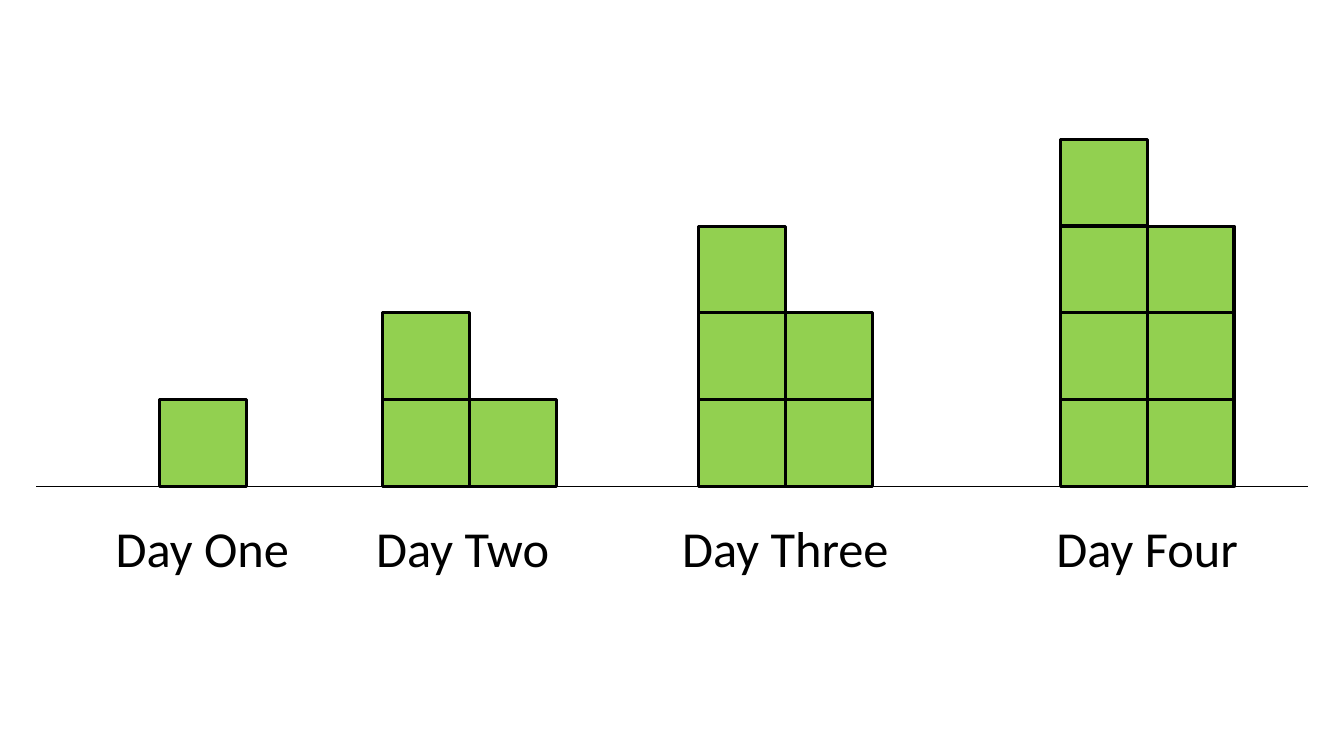
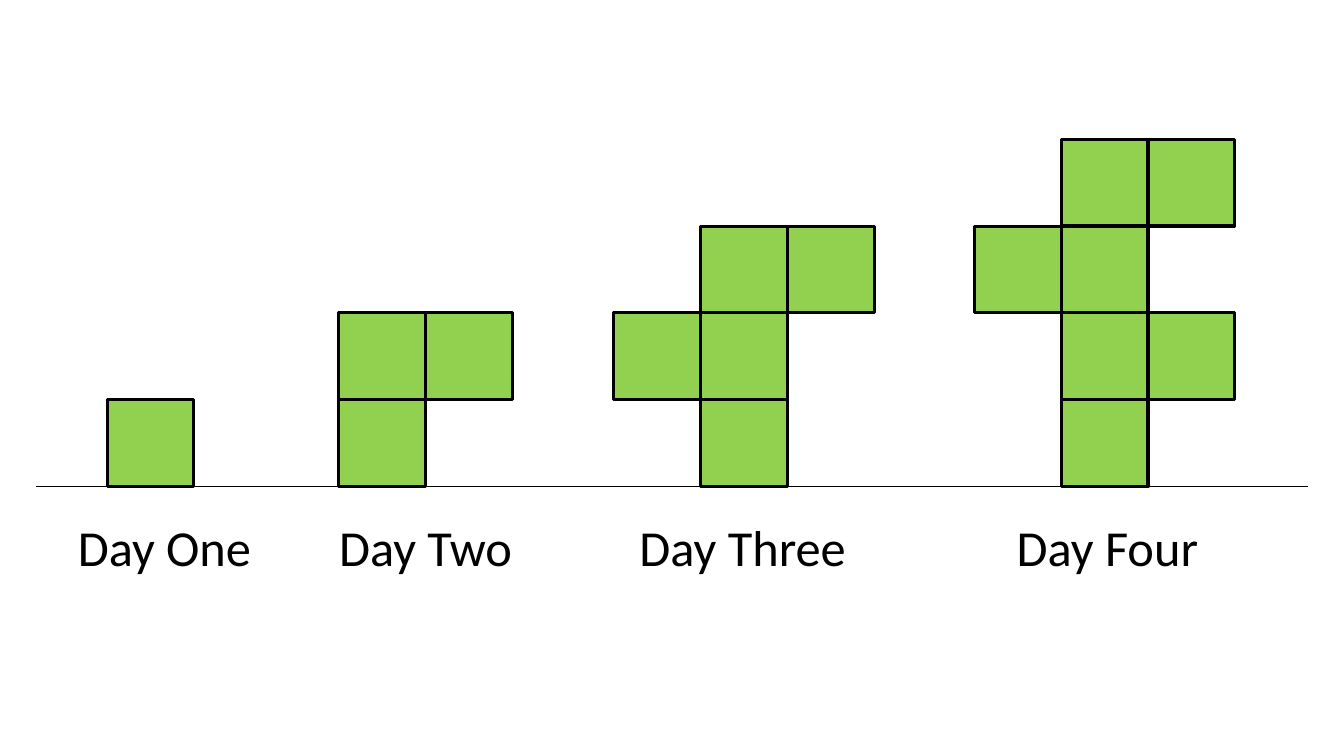
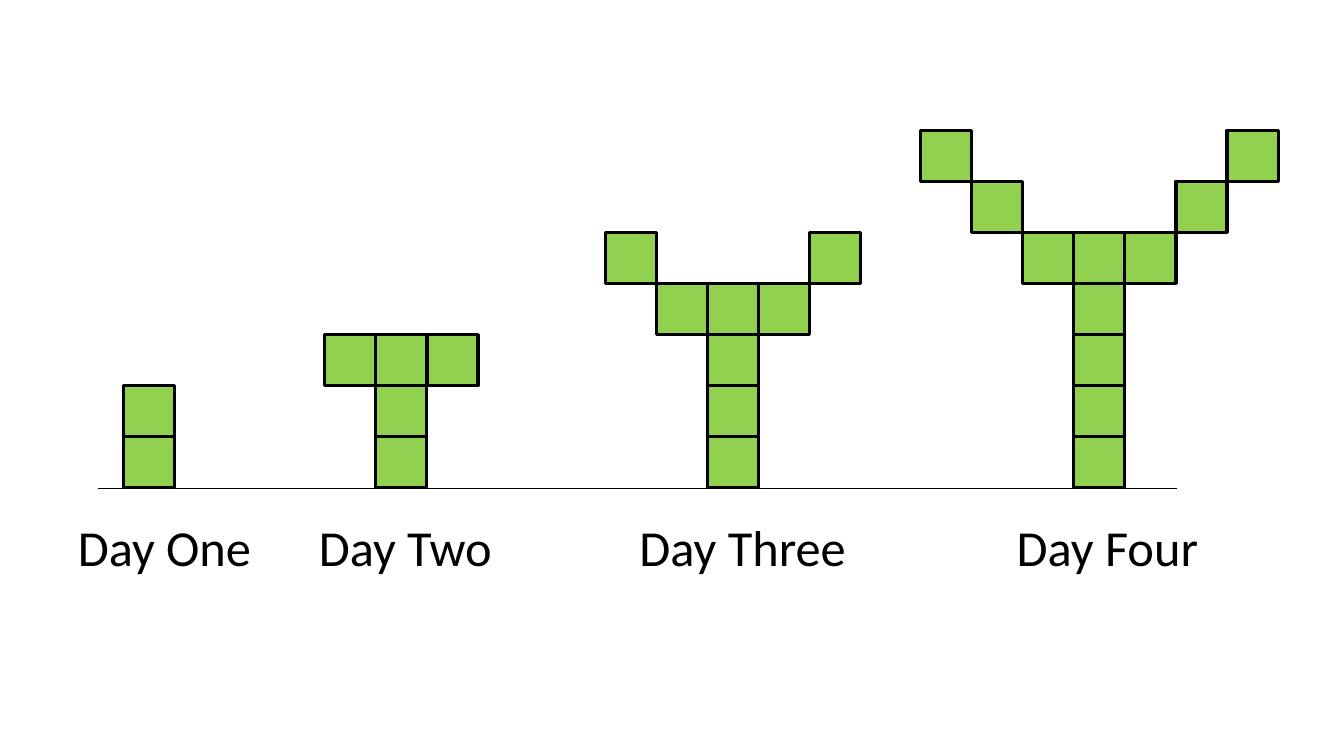
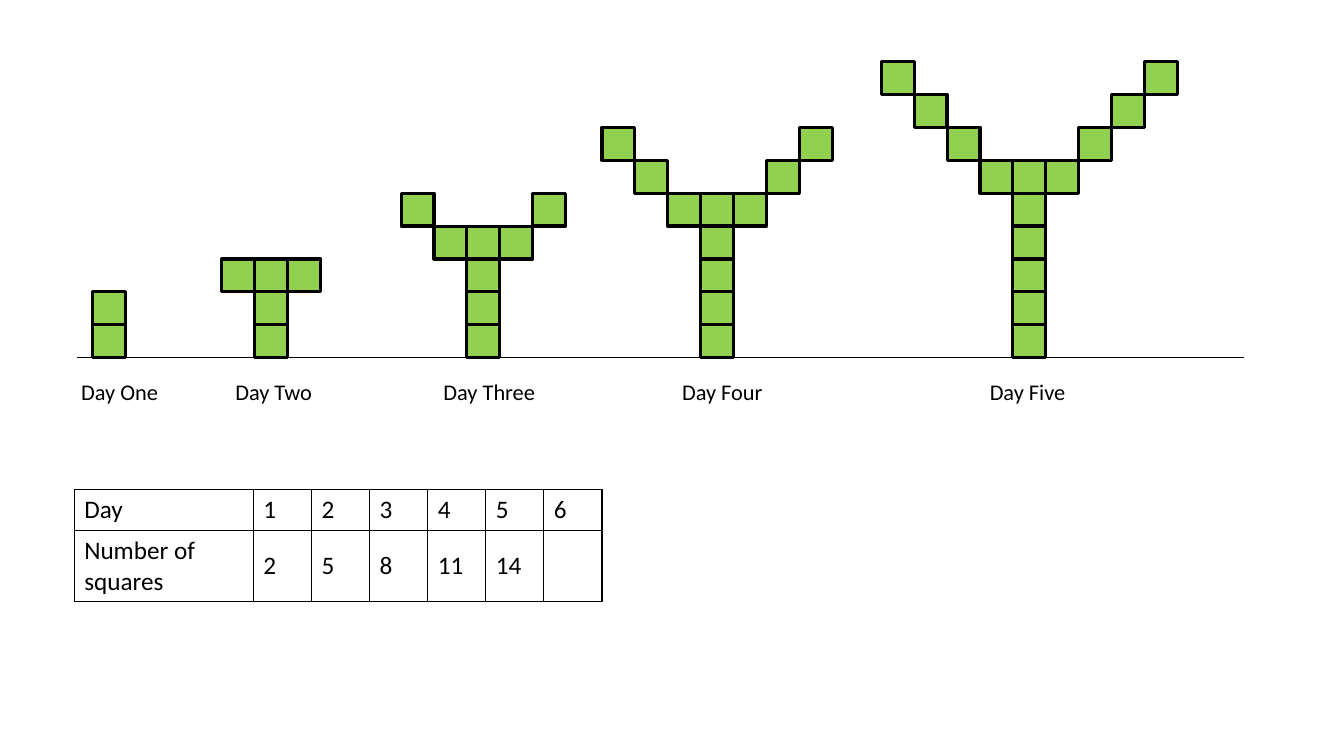
from dataclasses import dataclass

from pptx import Presentation
from pptx.dml.color import RGBColor as Rgb
from pptx.enum.shapes import MSO_CONNECTOR as Conn, MSO_SHAPE as Shape
from pptx.enum.text import MSO_ANCHOR as Anchor, MSO_AUTO_SIZE as Fit, PP_ALIGN as Align
from pptx.oxml import parse_xml
from pptx.oxml.ns import nsdecls
from pptx.util import Emu, Pt

PX = 6350  # 144 px to the inch


@dataclass(frozen=True)
class Theme:
    ink: str = "000000"
    leaf: str = "92D050"
    font: str = "Calibri"
    large: int = 36
    small: int = 16
    grid: int = 18
    edge: float = 2.25
    ground: float = 0.5
    border: int = 1


THEME = Theme()
NAMES = ("One", "Two", "Three", "Four", "Five")


def px(*sizes):
    return [Emu(size * PX) for size in sizes]


def put(target, values):
    for name, value in values.items():
        setattr(target, name, value)


def style(para, size):
    put(para.font, {"name": THEME.font, "size": Pt(size)})
    para.font.color.rgb = Rgb.from_string(THEME.ink)


def stroke(line, width):
    line.color.rgb = Rgb.from_string(THEME.ink)
    line.width = Pt(width)


# Each pattern gives the (column, row) cells of a day, counted from the ground.
def stairs(day):
    return [(col, row) for col in (0, 1) for row in range(day - col)]


def branch(day):
    """A trunk with side cells that alternate, the top one on the right."""
    trunk = [(0, row) for row in range(day)]
    sides = [(1 if (day - row) % 2 else -1, row) for row in range(1, day)]
    return trunk + sides


def tree(day):
    """A trunk with two arms that rise outwards."""
    trunk = [(0, row) for row in range(day + 1)]
    arms = [(side * step, day - 1 + step) for step in range(1, day) for side in (-1, 1)]
    return trunk + arms


def add_ground(slide, left, right, top):
    line = slide.shapes.add_connector(Conn.STRAIGHT, *px(left, top, right, top))
    stroke(line.line, THEME.ground)
    line.element.spPr.append(parse_xml(f"<a:effectLst {nsdecls('a')}/>"))


def add_figure(slide, cells, left, ground, side):
    group = slide.shapes.add_group_shape()
    for col, row in cells:
        box = group.shapes.add_shape(
            Shape.RECTANGLE, *px(left + col * side, ground - (row + 1) * side, side, side))
        box.shadow.inherit = False
        box.fill.solid()
        box.fill.fore_color.rgb = Rgb.from_string(THEME.leaf)
        stroke(box.line, THEME.edge)


def add_label(slide, text, place, size):
    frame = slide.shapes.add_textbox(*px(*place)).text_frame
    put(frame, {"word_wrap": True, "auto_size": Fit.SHAPE_TO_FIT_TEXT})
    para = frame.paragraphs[0]
    put(para, {"text": text, "alignment": Align.CENTER})
    style(para, size)


def add_borders(cell):
    props = cell._tc.get_or_add_tcPr()
    for spot, side in enumerate("LRTB"):
        props.insert(spot, parse_xml(
            f'<a:ln{side} {nsdecls("a")} w="{Pt(THEME.border)}"><a:solidFill>'
            f'<a:srgbClr val="{THEME.ink}"/></a:solidFill></a:ln{side}>'))


def add_grid(slide, rows, left, top, widths, heights):
    place = px(left, top, sum(widths), sum(heights))
    table = slide.shapes.add_table(len(rows), len(widths), *place).table
    put(table, {"first_row": False, "horz_banding": False})
    for col, width in zip(table.columns, px(*widths)):
        col.width = width
    for line, height in zip(table.rows, px(*heights)):
        line.height = height
    for r, row in enumerate(rows):
        for c, text in enumerate(row):
            cell = table.cell(r, c)
            put(cell, {"text": str(text), "vertical_anchor": Anchor.MIDDLE})
            cell.fill.background()
            style(cell.text_frame.paragraphs[0], THEME.grid)
            add_borders(cell)


def add_growth(deck, pattern, side, ground, span, lefts, labels, box, size):
    """One slide of figures by day; box is the top, width and height of a label."""
    slide = deck.slides.add_slide(deck.slide_layouts[6])
    add_ground(slide, *span, ground)
    for day, (name, left, label) in enumerate(zip(NAMES, lefts, labels), 1):
        add_figure(slide, pattern(day), left, ground, side)
        add_label(slide, f"Day {name}", (label, *box), size)
    return slide


def main():
    deck = Presentation()
    deck.slide_width, deck.slide_height = px(1920, 1080)
    wide = (52, 1869)

    add_growth(deck, stairs, 124, 695, wide, (228, 547, 998, 1515),
               (112, 484, 945, 1462), (732, 354, 102), THEME.large)
    add_growth(deck, branch, 124, 695, wide, (153, 484, 1001, 1516),
               (58, 431, 884, 1405), (730, 354, 102), THEME.large)
    add_growth(deck, tree, 73, 697, (140, 1682), (176, 537, 1011, 1534),
               (58, 402, 884, 1405), (730, 354, 102), THEME.large)
    last = add_growth(deck, tree, 47, 511, (110, 1777), (132, 364, 667, 1001, 1447),
                      (58, 278, 586, 919, 1355), (533, 226, 53), THEME.small)

    counts = [len(tree(day)) for day in range(1, 6)]
    rows = [["Day", *range(1, 7)], ["Number of squares", *counts, ""]]
    add_grid(last, rows, 106, 699, [256] + [83] * 6, [59, 101])
    deck.save("out.pptx")


if __name__ == "__main__":
    main()
